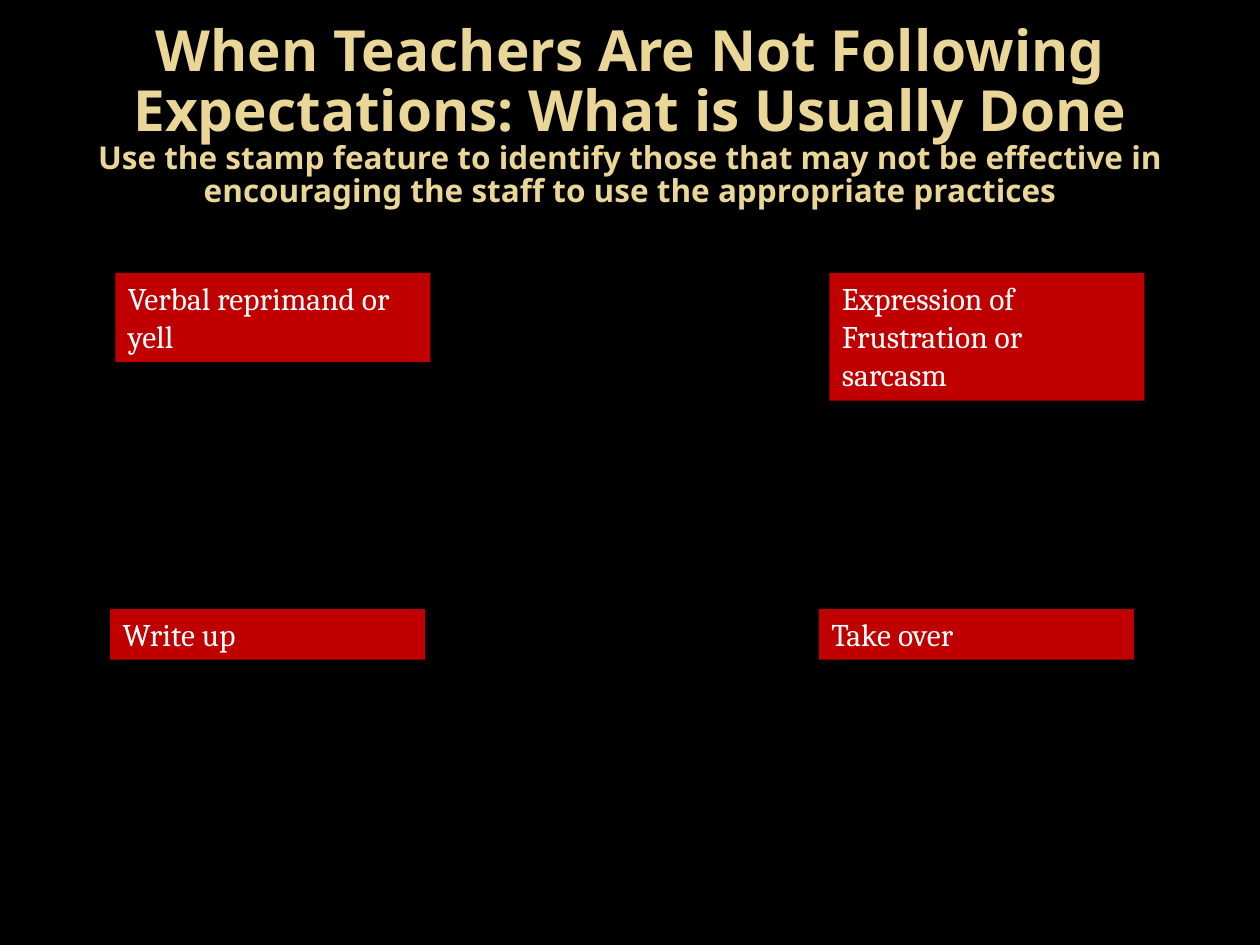
from copy import deepcopy

from pptx import Presentation
from pptx.dml.color import RGBColor
from pptx.enum.text import MSO_ANCHOR, MSO_AUTO_SIZE, PP_ALIGN
from pptx.util import Pt

BLACK = RGBColor(0x00, 0x00, 0x00)
GOLD = RGBColor(0xEA, 0xD6, 0x96)
RED = RGBColor(0xC0, 0x00, 0x00)
WHITE = RGBColor(0xFF, 0xFF, 0xFF)

HEADING = "When Teachers Are Not Following Expectations: What is Usually Done"
INSTRUCTION = ("Use the stamp feature to identify those that may not be effective in "
               "encouraging the staff to use the appropriate practices")

# text, left, top, height in points
RESPONSES = [
    ("Verbal reprimand or yell", 66, 156, 51),
    ("Write up", 63, 348, 29),
    ("Expression of Frustration or sarcasm", 474, 156, 73),
    ("Take over", 468, 348, 29),
]
RESPONSE_WIDTH = 180


class SlideBuilder:
    title_font = {"name": "Noto Sans", "bold": True}
    response_font = {"name": "Cambria", "size": Pt(18)}

    def __init__(self, prs):
        self.s = prs.slides.add_slide(prs.slide_layouts[5])
        fill = self.s.background.fill
        fill.solid()
        fill.fore_color.rgb = BLACK

    def run(self, p, text, color, font):
        r = p.add_run()
        r.text = text
        r.font.color.rgb = color
        for key, value in font.items():
            setattr(r.font, key, value)
        return r

    def title(self, heading, instruction, left, top, width, height):
        sp = self.s.shapes.title
        sp.left, sp.top, sp.width, sp.height = map(Pt, (left, top, width, height))
        tf = sp.text_frame
        frame_format = {"word_wrap": True, "auto_size": MSO_AUTO_SIZE.NONE,
                        "vertical_anchor": MSO_ANCHOR.MIDDLE}
        for key, value in frame_format.items():
            setattr(tf, key, value)
        p = tf.paragraphs[0]
        p.alignment = PP_ALIGN.CENTER
        p.line_spacing = 0.88
        r = self.run(p, heading, GOLD, {**self.title_font, "size": Pt(32.4)})
        p.add_line_break()
        # The break takes the heading's size, so it does not stretch the line
        p._p[-1].append(deepcopy(r._r.rPr))
        self.run(p, instruction, GOLD, {**self.title_font, "size": Pt(18)})

    def response(self, text, left, top, width, height):
        sp = self.s.shapes.add_textbox(*map(Pt, (left, top, width, height)))
        sp.fill.solid()
        sp.fill.fore_color.rgb = RED
        tf = sp.text_frame
        tf.word_wrap = True
        tf.auto_size = MSO_AUTO_SIZE.SHAPE_TO_FIT_TEXT
        self.run(tf.paragraphs[0], text, WHITE, self.response_font)


def main():
    prs = Presentation()
    prs.slide_width, prs.slide_height = Pt(720), Pt(540)
    slide = SlideBuilder(prs)
    slide.title(HEADING, INSTRUCTION, 36, 21.6, 648, 90)
    for text, left, top, height in RESPONSES:
        slide.response(text, left, top, RESPONSE_WIDTH, height)
    prs.save("out.pptx")


if __name__ == "__main__":
    main()
